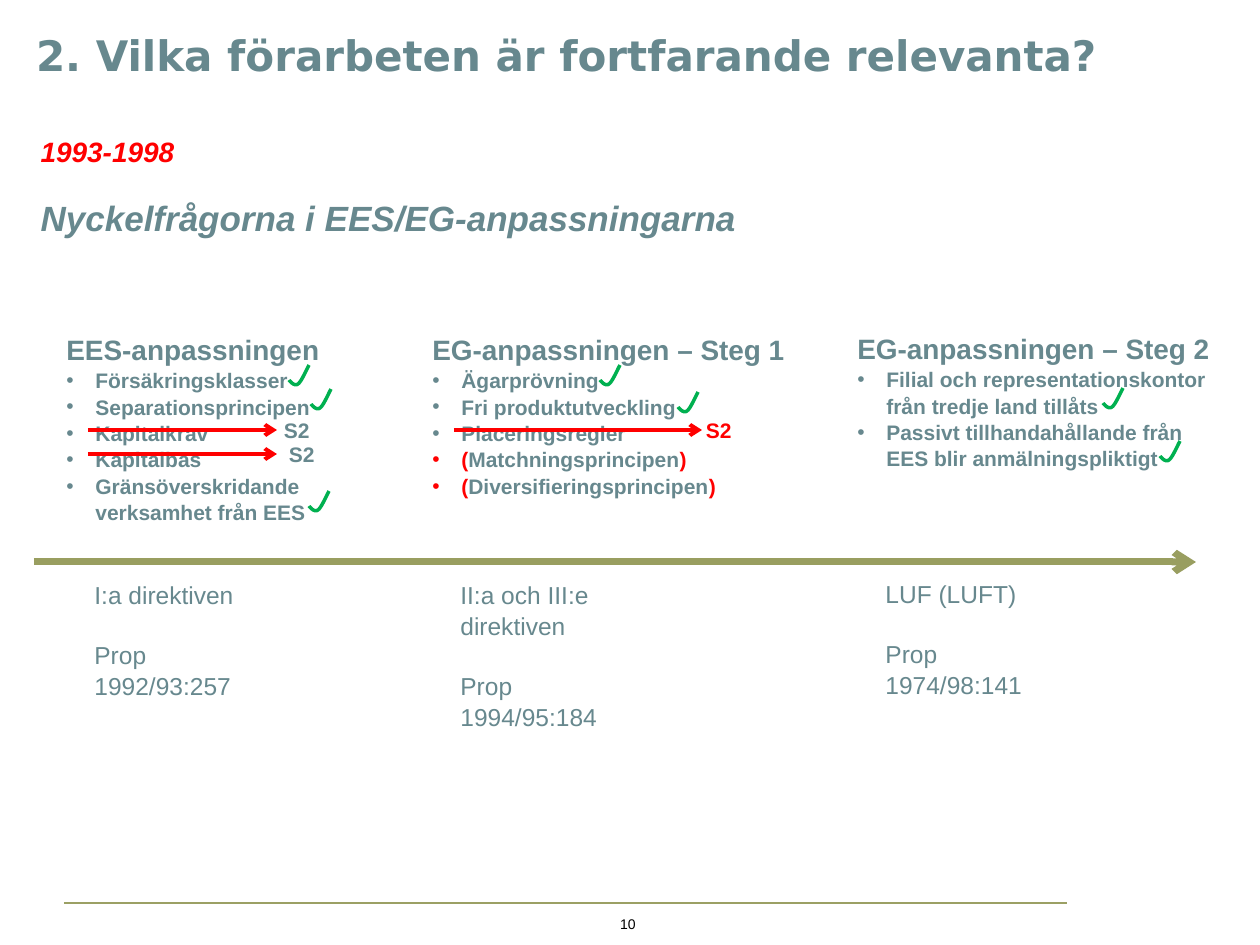
from lxml.etree import SubElement
from pptx import Presentation
from pptx.dml.color import RGBColor
from pptx.enum.shapes import MSO_CONNECTOR
from pptx.enum.text import MSO_ANCHOR, MSO_AUTO_SIZE, PP_ALIGN
from pptx.oxml.ns import qn
from pptx.util import Emu, Pt

SCALE = 914400 / 126
SLATE = RGBColor(0x67, 0x88, 0x8E)
RED = RGBColor(0xFF, 0x00, 0x00)
GREEN = RGBColor(0x00, 0xB0, 0x50)
OLIVE = RGBColor(0x99, 0x9E, 0x60)
RULE = RGBColor(0x9B, 0xA0, 0x64)
BLACK = RGBColor(0x00, 0x00, 0x00)

COLUMNS = [
    dict(
        box=(54, 325, 365, 185),
        heading="EES-anpassningen",
        bullets=[
            [("Försäkringsklasser", SLATE)],
            [("Separationsprincipen", SLATE)],
            [("Kapitalkrav", SLATE)],
            [("Kapitalbas", SLATE)],
            [("Gränsöverskridande verksamhet från EES", SLATE)],
        ],
        ticks=[(235, 40), (257, 64), (255, 166)],
        strikes=[(105, 223, 230, SLATE), (129, 223, 235, SLATE)],
        note=["I:a direktiven", "Prop", "1992/93:257"],
    ),
    dict(
        box=(420, 325, 379, 185),
        heading="EG-anpassningen – Steg 1",
        bullets=[
            [("Ägarprövning", SLATE)],
            [("Fri produktutveckling", SLATE)],
            [("Placeringsregler", SLATE)],
            [("(", RED), ("Matchningsprincipen", SLATE), (")", RED)],
            [("(", RED), ("Diversifieringsprincipen", SLATE), (")", RED)],
        ],
        ticks=[(180, 40), (258, 67)],
        strikes=[(105, 282, 286, RED)],
        note=["II:a och III:e direktiven", "Prop", "1994/95:184"],
    ),
    dict(
        box=(845, 324, 379, 185),
        heading="EG-anpassningen – Steg 2",
        bullets=[
            [("Filial och representationskontor från tredje land tillåts", SLATE)],
            [("Passivt tillhandahållande från EES blir anmälningspliktigt", SLATE)],
        ],
        ticks=[(258, 64), (315, 117)],
        strikes=[],
        note=["LUF (LUFT)", "Prop", "1974/98:141"],
    ),
]


def px(n):
    """Turn pixels into EMU."""
    return Emu(round(n * SCALE))


def place(sp, x, y, w, h):
    """Move and size a shape in pixels."""
    sp.left, sp.top, sp.width, sp.height = px(x), px(y), px(w), px(h)


def add_run(p, text, size, color, bold=False, italic=False, font="Arial"):
    """Append a formatted run to a paragraph."""
    r = p.add_run()
    r.text = text
    f = r.font
    f.name, f.size, f.bold, f.italic = font, Pt(size), bold, italic
    f.color.rgb = color


def add_text(s, x, y, w, h, inset=True):
    """Add a wrapping text box and return its frame."""
    tf = s.shapes.add_textbox(px(x), px(y), px(w), px(h)).text_frame
    tf.word_wrap = True
    if not inset:
        tf.margin_left = tf.margin_right = tf.margin_top = tf.margin_bottom = 0
        tf.vertical_anchor = MSO_ANCHOR.MIDDLE
    return tf


def add_line(s, x1, x2, y, color, width, arrow=True):
    """Draw a horizontal line, with an arrowhead if wanted."""
    ln = s.shapes.add_connector(MSO_CONNECTOR.STRAIGHT, px(x1), px(y), px(x2), px(y))
    ln.line.color.rgb = color
    ln.line.width = Pt(width)
    if arrow:
        SubElement(ln.line._get_or_add_ln(), qn("a:tailEnd"), type="arrow")
    SubElement(ln._element.spPr, qn("a:effectLst"))


def curve(a, b, c, d, steps=8):
    """Return points along a cubic Bézier curve after its start."""
    ts = [i / steps for i in range(1, steps + 1)]
    return [
        tuple(
            (1 - t) ** 3 * k + 3 * t * (1 - t) ** 2 * m + 3 * t * t * (1 - t) * n + t ** 3 * o
            for k, m, n, o in zip(a, b, c, d)
        )
        for t in ts
    ]


def add_tick(s, x, y):
    """Draw a green check mark in a 20 px box."""
    pts = curve((20, 0), (16, 8), (12, 17), (9, 19)) + curve((9, 19), (5, 22), (0, 15), (0, 15))
    fb = s.shapes.build_freeform(px(x + 20), px(y))
    fb.add_line_segments([(px(x + i), px(y + j)) for i, j in pts], close=False)
    sp = fb.convert_to_shape()
    sp.shadow.inherit = False
    sp.fill.background()
    sp.line.color.rgb = GREEN
    sp.line.width = Pt(2)


def add_bullet(p):
    """Give a paragraph a hanging bullet."""
    pPr = p._p.get_or_add_pPr()
    pPr.set("marL", str(px(29)))
    pPr.set("indent", str(-px(29)))
    SubElement(pPr, qn("a:buFont"), typeface="Arial")
    SubElement(pPr, qn("a:buChar"), char="•")


def add_column(s, box, heading, bullets, ticks, strikes, note):
    """Place one reform step with its marks and the note below it."""
    x, y, w, h = box
    tf = add_text(s, x, y, w, h)
    p = tf.paragraphs[0]
    p.line_spacing = 1.05
    add_run(p, heading, 16, SLATE, bold=True)
    for runs in bullets:
        p = tf.add_paragraph()
        p.line_spacing = 1.05
        add_bullet(p)
        for text, color in runs:
            add_run(p, text, 12, color, bold=True)
    for dy, end, label_x, color in strikes:
        add_line(s, x + 34, x + end, y + dy, RED, 2.25)
        label = add_text(s, x + label_x, y + dy - 12, 40, 24, inset=False)
        add_run(label.paragraphs[0], "S2", 12, color, bold=True)
    for dx, dy in ticks:
        add_tick(s, x + dx, y + dy)
    tf = add_text(s, x + 28, y + 247, 193, 156)
    for i, text in enumerate(note):
        p = tf.add_paragraph() if i else tf.paragraphs[0]
        p.line_spacing = 1.05
        p.space_before = Pt(17 if i == 1 else 0)
        add_run(p, text, 14, SLATE)


def add_title(s, x, y, w, h):
    """Fill the title placeholder."""
    place(s.shapes.title, x, y, w, h)
    tf = s.shapes.title.text_frame
    tf.auto_size = MSO_AUTO_SIZE.NONE
    tf.margin_left = tf.margin_right = 0
    tf.vertical_anchor = MSO_ANCHOR.BOTTOM
    p = tf.paragraphs[0]
    p.alignment = PP_ALIGN.LEFT
    add_run(p, "2. Vilka förarbeten är fortfarande relevanta?", 24, SLATE, True, font="DejaVu Sans")


def add_body(s, x, y, w, h):
    """Fill the body placeholder with the period and the subject."""
    sp = s.placeholders[1]
    place(sp, x, y, w, h)
    tf = sp.text_frame
    tf.auto_size = MSO_AUTO_SIZE.NONE
    rows = [("1993-1998", 16, RED, 0), ("Nyckelfrågorna i EES/EG-anpassningarna", 20, SLATE, 20)]
    for i, (text, size, color, before) in enumerate(rows):
        p = tf.add_paragraph() if i else tf.paragraphs[0]
        pPr = p._p.get_or_add_pPr()
        pPr.set("marL", "0")
        pPr.set("indent", "0")
        SubElement(pPr, qn("a:buNone"))
        p.line_spacing, p.space_before = Pt(20), Pt(before)
        add_run(p, text, size, color, True, True)


def add_footer(s, x, y, w):
    """Draw the footer rule and the page number."""
    add_line(s, x, x + w, y, RULE, 0.75, arrow=False)
    p = add_text(s, x + 522, y + 9, 84, 23, inset=False).paragraphs[0]
    p.alignment = PP_ALIGN.CENTER
    add_run(p, "10", 8, BLACK)


def main():
    """Build the slide and save it."""
    prs = Presentation()
    prs.slide_width, prs.slide_height = px(1260), px(945)
    s = prs.slides.add_slide(prs.slide_layouts[1])
    add_title(s, 36, 15, 1131, 71)
    add_body(s, 28, 127, 1137, 709)
    add_footer(s, 64, 903, 1003)
    add_line(s, 34, 1196, 562, OLIVE, 4)
    for column in COLUMNS:
        add_column(s, **column)
    prs.save("out.pptx")


if __name__ == "__main__":
    main()
